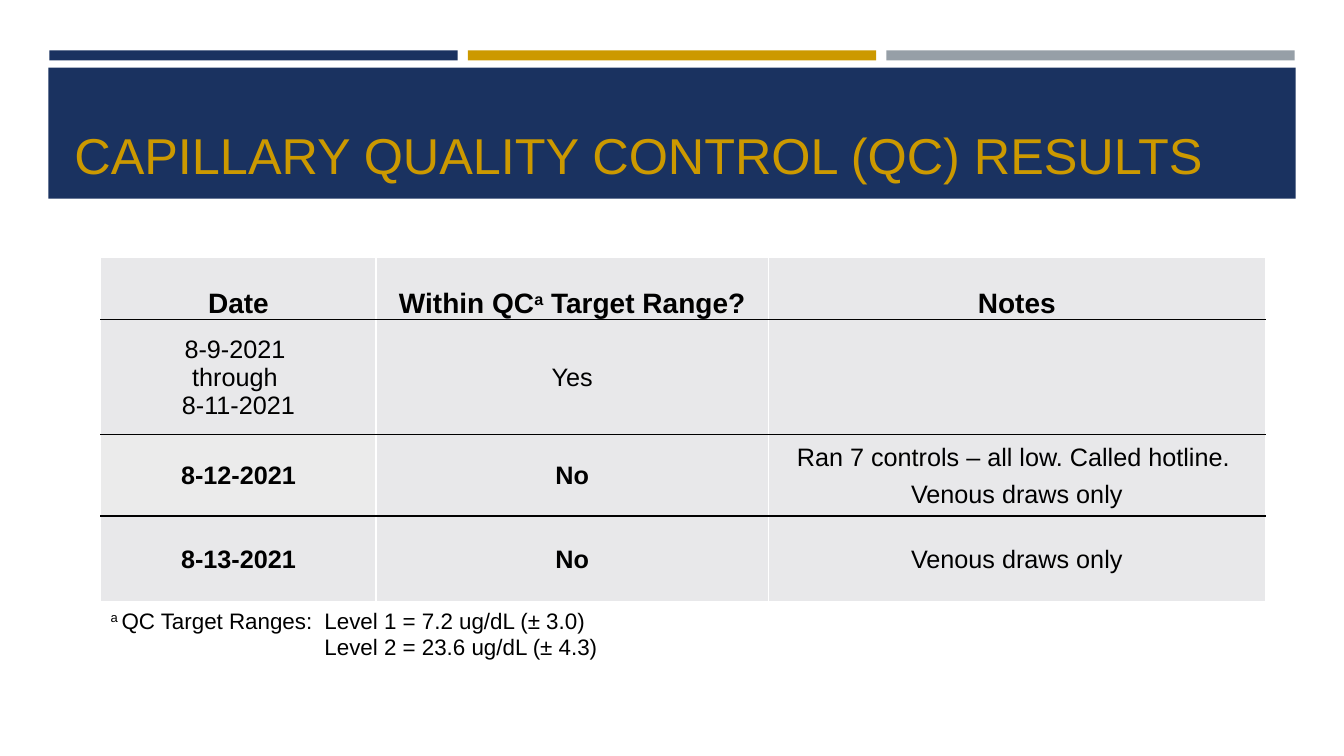
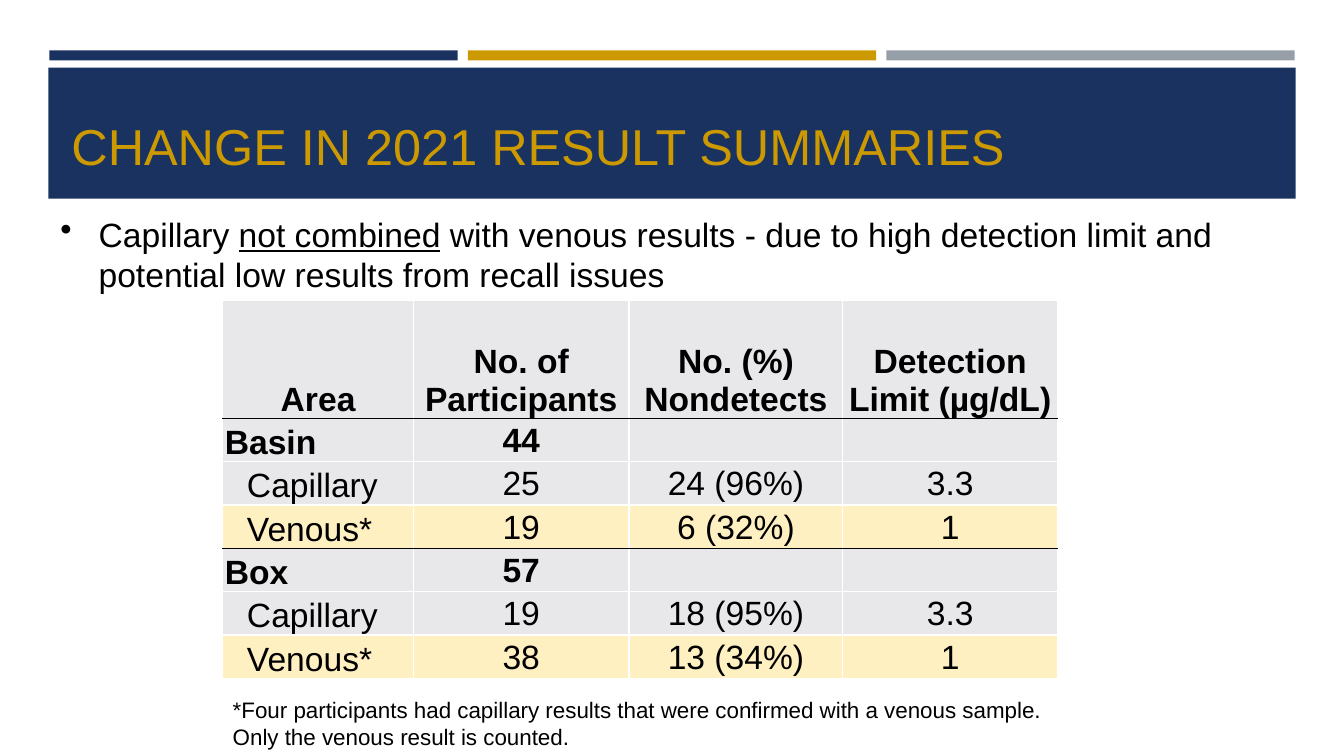
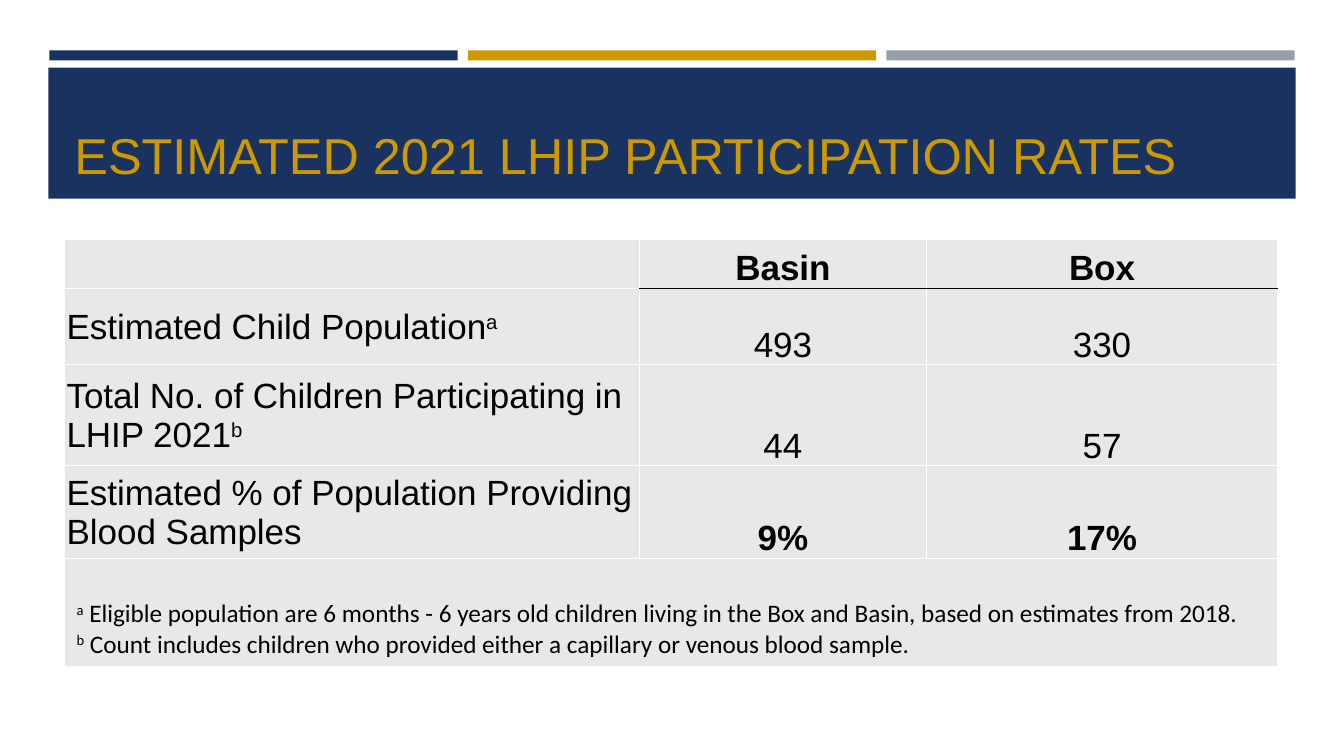
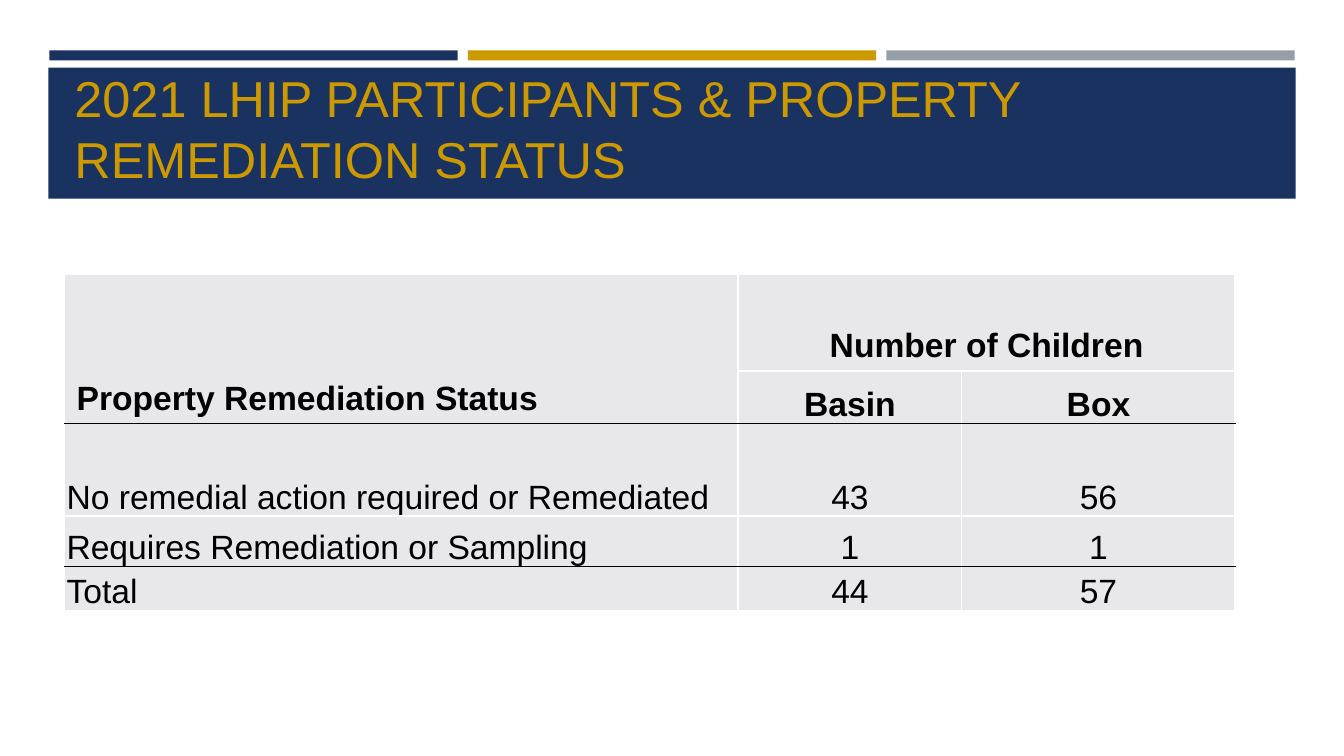
from lxml.etree import SubElement as Sub
from pptx import Presentation
from pptx.dml.color import RGBColor as Rgb
from pptx.enum.shapes import MSO_SHAPE as Shape
from pptx.enum.text import MSO_ANCHOR as Anchor, PP_ALIGN as Align
from pptx.oxml.ns import qn
from pptx.util import Inches, Pt

INK = {"navy": "1A3260", "gold": "CC9900", "gray": "969FA7", "black": "000000",
       "white": "FFFFFF", "cell": "E8E8EA", "pale": "EBEBEB", "cream": "FFF0C2"}
FONT = {"name": "Arial", "size": Pt(24), "bold": False}
CELL = {"margin_left": Inches(0.02), "margin_top": Inches(0.02),
        "margin_right": Inches(0.02), "margin_bottom": 0,
        "vertical_anchor": Anchor.BOTTOM}
HEAD = {"bold": True, "align": Align.CENTER, "vertical_anchor": Anchor.BOTTOM}
BOLD = {"bold": True}
THIN = {"bold": False}
LEFT = {"align": Align.LEFT}
MID = {"vertical_anchor": Anchor.MIDDLE}
SUB = {"margin_left": Inches(0.24)}
WIDE = {"margin_left": Inches(0.12), "margin_top": Inches(0.06),
        "margin_right": Inches(0.12), "margin_bottom": Inches(0.06)}
CREAM = {"fill": "cream"}


class Deck:
    """Hold the shared style and the current slide."""

    def __init__(self):
        self.prs = Presentation()
        self.prs.slide_width = Inches(13.33)
        self.prs.slide_height = Inches(7.5)

    def slide(self, title, left=0.64, top=0.77):
        self.page = self.prs.slides.add_slide(self.prs.slide_layouts[6])
        for i, ink in enumerate(("navy", "gold", "gray")):
            self.band(0.49 + i * 4.15, 0.5, 4.05, 0.1, ink)
        self.band(0.48, 0.67, 12.37, 1.3, "navy")
        box = self.text((left, top, 12.06, 1.11), title, size=Pt(36), ink="gold")
        box.vertical_anchor = Anchor.BOTTOM

    def band(self, left, top, wide, high, ink):
        bar = self.page.shapes.add_shape(Shape.RECTANGLE, *map(Inches, (left, top, wide, high)))
        bar.shadow.inherit = False
        bar.fill.solid()
        bar.fill.fore_color.rgb = Rgb.from_string(INK[ink])
        bar.line.fill.background()

    def text(self, at, words, **look):
        frame = self.page.shapes.add_textbox(*map(Inches, at)).text_frame
        frame.word_wrap = True
        self.fill(frame, words, look)
        return frame

    def fill(self, frame, words, look):
        for i, line in enumerate(words.split("\n")):
            para = frame.add_paragraph() if i else frame.paragraphs[0]
            para.alignment = look.get("align", Align.LEFT)
            if i and "gap" in look:
                para.space_before = look["gap"]
            props = para._p.get_or_add_pPr()
            if "hang" in look:
                props.set("marL", str(look["hang"]))
                props.set("indent", str(-look["hang"]))
                Sub(props, qn("a:buChar"), char="•")
            if "tab" in look:
                Sub(Sub(props, qn("a:tabLst")), qn("a:tab"), pos=str(look["tab"]), algn="l")
            for j, part in enumerate(line.split("|")):
                if part:
                    self.piece(para, part, look, j % 2)

    def piece(self, para, words, look, marked):
        run = para.add_run()
        run.text = words
        for key, value in FONT.items():
            setattr(run.font, key, look.get(key, value))
        run.font.color.rgb = Rgb.from_string(INK[look.get("ink", "black")])
        if marked and look.get("line"):
            run.font.underline = True
        elif marked:
            run._r.get_or_add_rPr().set("baseline", "30000")

    def table(self, at, cols, rows, rules, base, first=None, spans=()):
        size = sum(cols), sum(row[0] for row in rows)
        grid = self.page.shapes.add_table(
            len(rows), len(cols), *map(Inches, at + size)).table
        grid.first_row = grid.horz_banding = False
        for col, wide in zip(grid.columns, cols):
            col.width = Inches(wide)
        for top, left, low, right in spans:
            grid.cell(top, left).merge(grid.cell(low, right))
        for r, (high, look, items) in enumerate(rows):
            grid.rows[r].height = Inches(high)
            for c, item in enumerate(items):
                words, own = item if isinstance(item, tuple) else (item, {})
                lead = first if first and c == 0 else {}
                cell = grid.cell(r, c)
                last = r + (cell.span_height if cell.is_merge_origin else 1) - 1
                dark = [c >= rules.get(n, len(cols)) for n in (r - 1, last)]
                self.cell(cell, words, {**base, **lead, **look, **own}, dark)

    def cell(self, cell, words, look, dark):
        for key, value in CELL.items():
            setattr(cell, key, look.get(key, value))
        props = cell._tc.get_or_add_tcPr()
        for side, black in zip("LRTB", [False, False] + dark):
            edge = Sub(props, qn("a:ln" + side), w=str(Pt(1)))
            ink = INK["black" if black else "white"]
            Sub(Sub(edge, qn("a:solidFill")), qn("a:srgbClr"), val=ink)
        cell.fill.solid()
        cell.fill.fore_color.rgb = Rgb.from_string(INK[look.get("fill", "cell")])
        self.fill(cell.text_frame, words, look)


def main():
    deck = Deck()
    low = {"align": Align.CENTER}
    mid = {**low, **MID}

    deck.slide("CAPILLARY QUALITY CONTROL (QC) RESULTS")
    deck.table((1, 2.55), (2.73, 3.89, 4.93), [
        (0.62, {**HEAD, "size": Pt(20)}, ["Date", "Within QC|a| Target Range?", "Notes"]),
        (1.14, {}, ["8-9-2021 \nthrough \n8-11-2021", "Yes", ""]),
        (0.81, BOLD, [("8-12-2021", {"fill": "pale"}), "No",
                      ("Ran 7 controls – all low. Called hotline. \nVenous draws only",
                       {**THIN, "gap": Pt(6)})]),
        (0.85, BOLD, ["8-13-2021", "No", ("Venous draws only", THIN)]),
    ], {0: 0, 1: 0, 2: 0}, {**mid, "size": Pt(18)})
    deck.text((1, 5.97, 11.56, 0.64),
              "|a |QC Target Ranges:\tLevel 1 = 7.2 ug/dL (± 3.0)\n"
              "\tLevel 2 = 23.6 ug/dL (± 4.3)", size=Pt(16), tab=Inches(2.12))

    deck.slide("CHANGE IN 2021 RESULT SUMMARIES", 0.61, 0.68)
    deck.table((2.21, 2.98), (1.89, 2.14, 2.12, 2.13), [
        (1.17, HEAD, ["Area", "No. of Participants", "No. (%) Nondetects",
                      "Detection Limit (µg/dL)"]),
        (0.43, BOLD, ["Basin", "44", "", ""]),
        (0.43, {}, [("Capillary", SUB), "25", "24 (96%)", "3.3"]),
        (0.43, CREAM, [("Venous*", SUB), "19", "6 (32%)", "1"]),
        (0.43, BOLD, ["Box", "57", "", ""]),
        (0.43, {}, [("Capillary", SUB), "19", "18 (95%)", "3.3"]),
        (0.43, CREAM, [("Venous*", SUB), "38", "13 (34%)", "1"]),
    ], {0: 0, 3: 0}, mid, {**LEFT, "vertical_anchor": Anchor.BOTTOM})
    deck.text((2.21, 6.86, 8.29, 0.64),
              "*Four participants had capillary results that were confirmed with a "
              "venous sample. Only the venous result is counted.", size=Pt(16))
    deck.text((0.5, 2.07, 12.28, 0.91),
              "Capillary |not combined| with venous results - due to high detection "
              "limit and potential low results from recall issues",
              hang=Inches(0.38), line=True)

    deck.slide("ESTIMATED 2021 LHIP PARTICIPATION RATES")
    note = {**WIDE, "name": "Calibri", "size": Pt(18), "vertical_anchor": Anchor.BOTTOM}
    deck.table((0.64, 2.38), (5.7, 2.85, 3.48), [
        (0.48, HEAD, ["", "Basin", "Box"]),
        (0.76, {}, ["Estimated Child Population|a|", "493", "330"]),
        (1, {}, ["Total No. of Children Participating in LHIP 2021|b|", "44", "57"]),
        (0.92, {}, ["Estimated % of Population Providing Blood Samples",
                    ("9%", BOLD), ("17%", BOLD)]),
        (1.07, note, ["|a| Eligible population are 6 months - 6 years old children living "
                      "in the Box and Basin, based on estimates from 2018.\n"
                      "|b| Count includes children who provided either a capillary or "
                      "venous blood sample.", "", ""]),
    ], {0: 1}, {**low, "size": Pt(25)}, {**LEFT, **MID}, [(4, 0, 4, 2)])

    deck.slide("2021 LHIP PARTICIPANTS & PROPERTY REMEDIATION STATUS", top=0.81)
    deck.table((0.64, 2.72), (6.68, 2.22, 2.71), [
        (0.96, {**BOLD, **WIDE}, ["Property Remediation Status", "Number of Children", ""]),
        (0.44, BOLD, ["", "Basin", "Box"]),
        (0.92, {}, ["No remedial action required or Remediated", "43", "56"]),
        (0.5, {}, ["Requires Remediation or Sampling", "1", "1"]),
        (0.44, {}, ["Total", "44", "57"]),
    ], {1: 0, 3: 0}, low, LEFT, [(0, 0, 1, 0), (0, 1, 0, 2)])

    deck.prs.save("out.pptx")


if __name__ == "__main__":
    main()
